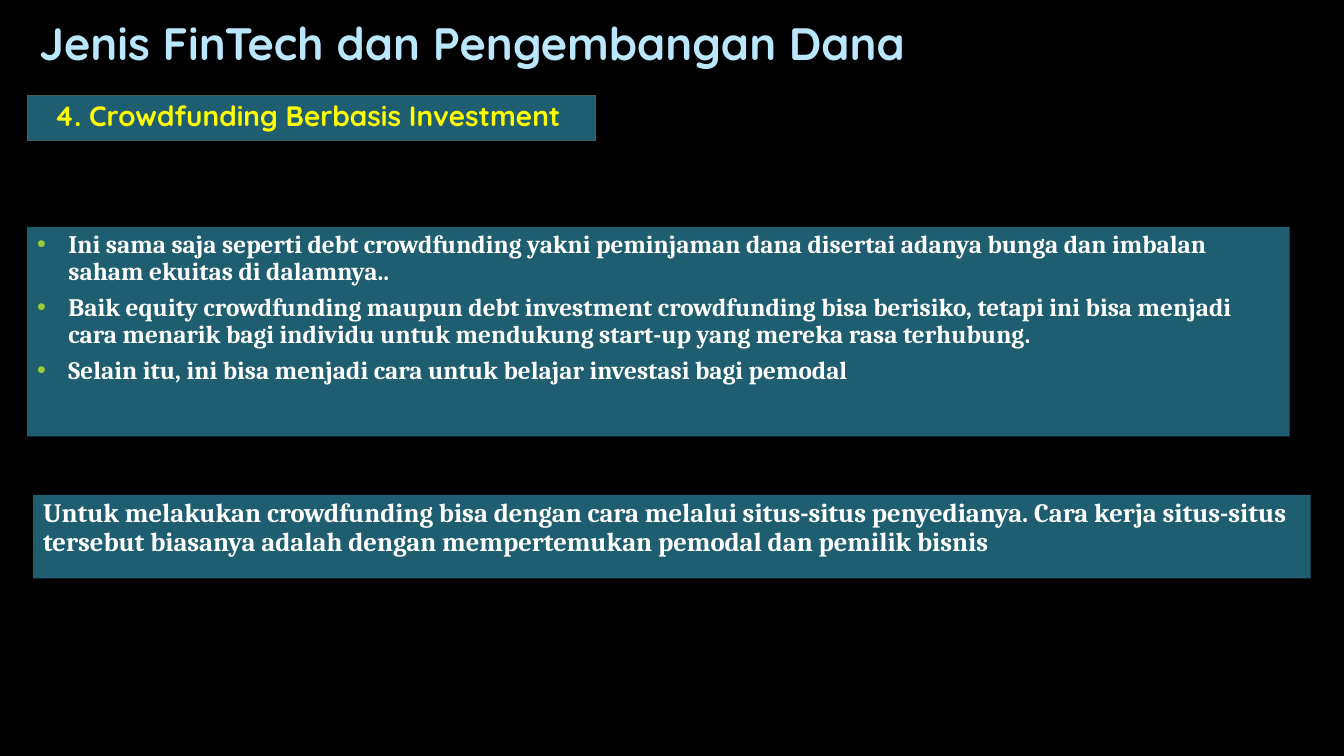
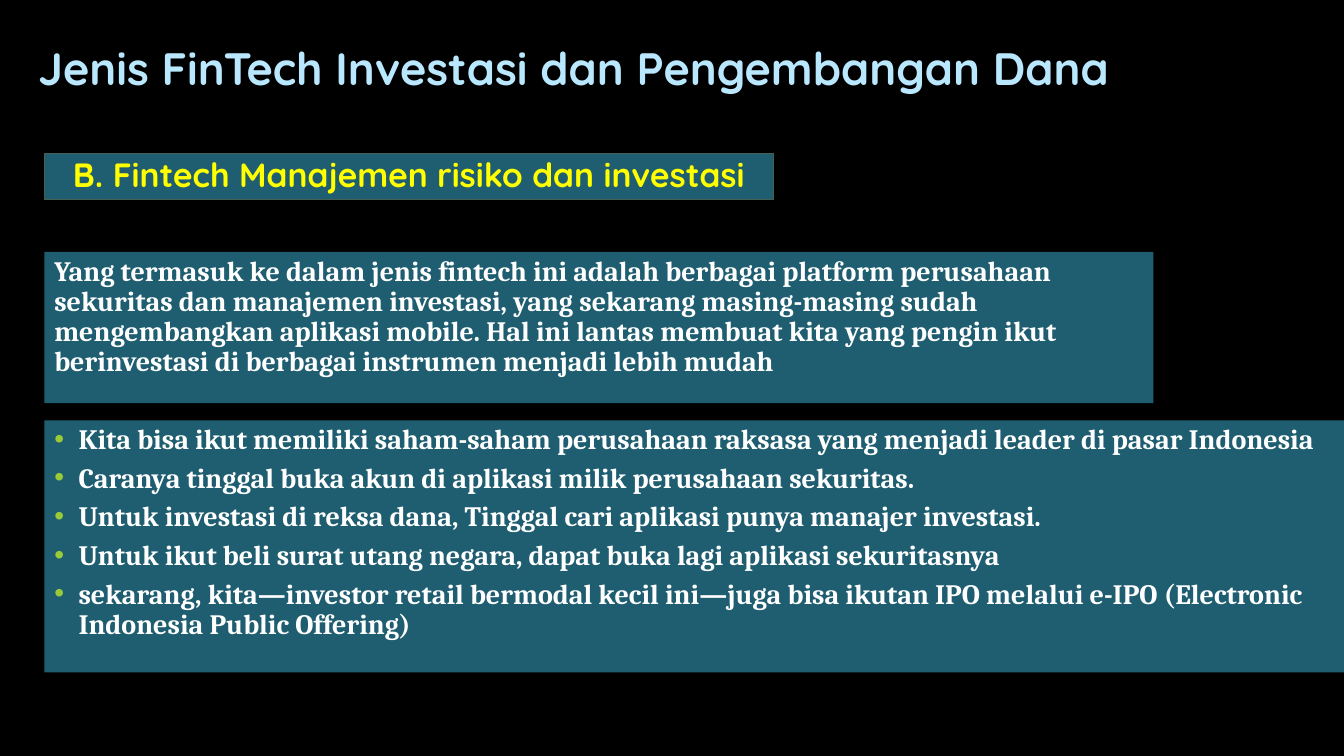
from lxml import etree
from pptx import Presentation
from pptx.dml.color import RGBColor
from pptx.enum.shapes import MSO_SHAPE
from pptx.enum.text import MSO_ANCHOR, PP_ALIGN
from pptx.oxml.ns import qn
from pptx.util import Inches, Pt

RECT = MSO_SHAPE.RECTANGLE
BOTTOM, MIDDLE, TOP = MSO_ANCHOR.BOTTOM, MSO_ANCHOR.MIDDLE, MSO_ANCHOR.TOP
LEFT, CENTER = PP_ALIGN.LEFT, PP_ALIGN.CENTER
BLACK, TEAL, EDGE, LIME = "000000", "1E5E70", "455F51", "99CB38"
SKY, YELLOW, WHITE = "B9E7FD", "FFFF00", "FFFFFF"
HEAD, BODY = "Quicksand", "Cambria"


def color(code):
    return RGBColor.from_string(code)


def style(item, values):
    for name, value in values.items():
        setattr(item, name, value)


class Deck:
    def __init__(self):
        self.show = Presentation()
        style(self.show, {"slide_width": Inches(13.33), "slide_height": Inches(7.5)})
        self.slide = None

    def page(self):
        self.slide = self.show.slides.add_slide(self.show.slide_layouts[6])
        back = self.slide.background.fill
        back.solid()
        back.fore_color.rgb = color(BLACK)

    def title(self, at, text):
        box = self.slide.shapes.add_textbox(*map(Inches, at))
        self.fill_text(box, [text], HEAD, 32.4, SKY, anchor=BOTTOM)

    def panel(self, at):
        box = self.slide.shapes.add_shape(RECT, *map(Inches, at))
        box.shadow.inherit = False
        box.fill.solid()
        box.fill.fore_color.rgb = color(TEAL)
        box.line.fill.background()
        return box

    def label(self, at, text, size):
        box = self.panel(at)
        box.line.color.rgb = color(EDGE)
        box.line.width = Pt(0.75)
        self.fill_text(box, [text], HEAD, size, YELLOW, anchor=MIDDLE, align=CENTER)

    def note(self, at, text, size):
        self.fill_text(self.panel(at), [text], BODY, size, WHITE)

    def points(self, at, lines, size, indent):
        self.fill_text(self.panel(at), lines, BODY, size, WHITE, indent=indent)

    def bullet(self, para, indent):
        props = para._p.get_or_add_pPr()
        props.set("marL", str(Inches(indent)))
        props.set("indent", str(-Inches(indent)))
        tint = etree.SubElement(props, qn("a:buClr"))
        etree.SubElement(tint, qn("a:srgbClr")).set("val", LIME)
        etree.SubElement(props, qn("a:buFont")).set("typeface", "Arial")
        etree.SubElement(props, qn("a:buChar")).set("char", "•")

    def fill_text(self, box, lines, font, size, ink, anchor=TOP, align=LEFT, indent=0):
        frame = box.text_frame
        style(frame, {"word_wrap": True, "vertical_anchor": anchor})
        for i, text in enumerate(lines):
            para = frame.add_paragraph() if i else frame.paragraphs[0]
            if indent:
                self.bullet(para, indent)
            style(para, {"alignment": align, "line_spacing": 0.9,
                         "space_before": Pt(6 if i else 0)})
            run = para.add_run()
            run.text = text
            style(run.font, {"name": font, "size": Pt(size), "bold": True})
            run.font.color.rgb = color(ink)


def main():
    deck = Deck()

    deck.page()
    deck.title((0.29, 0.17, 11.33, 0.58), "Jenis FinTech dan Pengembangan Dana")
    deck.label((0.27, 0.95, 5.64, 0.44), "4. Crowdfunding Berbasis Investment ", 20)
    deck.points((0.27, 2.25, 12.52, 2.08), [
        "Ini sama saja seperti debt crowdfunding yakni peminjaman dana disertai "
        "adanya bunga dan imbalan saham ekuitas di dalamnya..",
        "Baik equity crowdfunding maupun debt investment crowdfunding bisa berisiko, "
        "tetapi ini bisa menjadi cara menarik bagi individu untuk mendukung start-up "
        "yang mereka rasa terhubung.",
        "Selain itu, ini bisa menjadi cara untuk belajar investasi bagi pemodal",
    ], 18, 0.31)
    deck.note((0.33, 4.91, 12.67, 0.83),
              "Untuk melakukan crowdfunding bisa dengan cara melalui situs-situs "
              "penyedianya. Cara kerja situs-situs tersebut biasanya adalah dengan "
              "mempertemukan pemodal dan pemilik bisnis", 19)

    deck.page()
    deck.title((0.28, 0.26, 11.33, 0.74), "Jenis FinTech Investasi dan Pengembangan Dana")
    deck.label((0.44, 1.52, 7.23, 0.46), "B. Fintech Manajemen risiko dan investasi", 24)
    deck.note((0.44, 2.5, 11, 1.5),
              "Yang termasuk ke dalam jenis fintech ini adalah berbagai platform "
              "perusahaan sekuritas dan manajemen investasi, yang sekarang masing-masing "
              "sudah mengembangkan aplikasi mobile. Hal ini lantas membuat kita yang "
              "pengin ikut berinvestasi di berbagai instrumen menjadi lebih mudah", 20)
    deck.points((0.44, 4.17, 12.89, 2.5), [
        "Kita bisa ikut memiliki saham-saham perusahaan raksasa yang menjadi leader "
        "di pasar Indonesia",
        "Caranya tinggal buka akun di aplikasi milik perusahaan sekuritas.",
        "Untuk investasi di reksa dana, Tinggal cari aplikasi punya manajer investasi.",
        "Untuk ikut beli surat utang negara, dapat buka lagi aplikasi sekuritasnya",
        "sekarang, kita—investor retail bermodal kecil ini—juga bisa ikutan IPO "
        "melalui e-IPO (Electronic Indonesia Public Offering)",
    ], 20, 0.24)

    deck.show.save("out.pptx")


if __name__ == "__main__":
    main()
